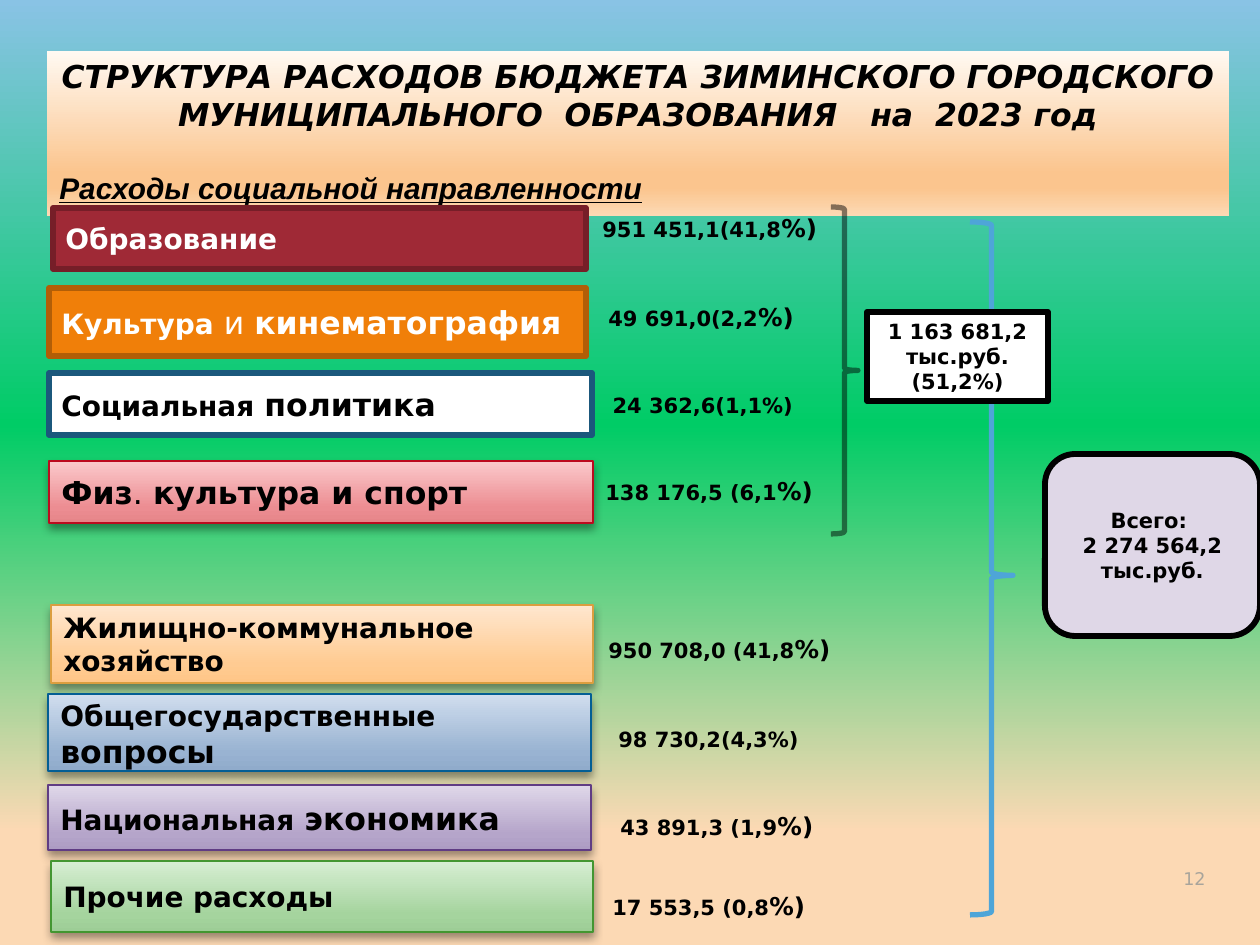
from lxml import etree
from pptx import Presentation
from pptx.dml.color import RGBColor
from pptx.enum.shapes import MSO_SHAPE
from pptx.enum.text import MSO_ANCHOR, PP_ALIGN
from pptx.oxml.ns import qn
from pptx.util import Pt

RECT, ROUNDED, BRACE = MSO_SHAPE.RECTANGLE, MSO_SHAPE.ROUNDED_RECTANGLE, MSO_SHAPE.RIGHT_BRACE
TOP, MIDDLE, BOTTOM = MSO_ANCHOR.TOP, MSO_ANCHOR.MIDDLE, MSO_ANCHOR.BOTTOM
LEFT, CENTER, RIGHT = PP_ALIGN.LEFT, PP_ALIGN.CENTER, PP_ALIGN.RIGHT
PX = 914400 / 126


class Theme:
    font, subtitle_font = "DejaVu Sans", "Arial"
    black, white, muted = "000000", "FFFFFF", "A8A49B"
    sky_to_sand = [(0, "89C3E5"), (45, "00CC66"), (88, "FCD9B4")]
    title_fill = [(0, "FFF9F2"), (74, "FBC58E"), (83, "FBC58E"), (100, "FCD9B4")]
    total_fill, total_brace = "DFD7E7", "4EA5D8"
    title, subtitle, large, label, percent, value, page = 18, 17, 18, 16, 14, 12, 10
    heavy, brace, thin = 3.35, 3, 0.75


def paint_gradient(fill, element, stops):
    """Fill from top to bottom; element is the XML that holds the fill."""
    fill.gradient()
    fill.gradient_angle = 270
    stop_list = element.find(".//" + qn("a:gsLst"))
    for stop in list(stop_list):
        stop_list.remove(stop)
    for position, color in stops:
        stop = etree.SubElement(stop_list, qn("a:gs"), pos=str(position * 1000))
        etree.SubElement(stop, qn("a:srgbClr"), val=color)


def add_block(kind, box, paragraphs=(), fill=None, line=None, weight=Theme.heavy,
              anchor=TOP, align=LEFT, color=Theme.black):
    """Add a shape, or a text box when kind is None; a run is (text, size, font changes)."""
    bounds = [round(length * PX) for length in box]
    if kind is None:
        block = slide.shapes.add_textbox(*bounds)
    else:
        block = slide.shapes.add_shape(kind, *bounds)
        block.shadow.inherit = False
        if isinstance(fill, list):
            paint_gradient(block.fill, block._element.spPr, fill)
        elif fill:
            block.fill.solid()
            block.fill.fore_color.rgb = RGBColor.from_string(fill)
        else:
            block.fill.background()
        if line:
            block.line.color.rgb = RGBColor.from_string(line)
            block.line.width = Pt(weight)
        else:
            block.line.fill.background()
    frame = block.text_frame
    frame.word_wrap = True
    frame.vertical_anchor = anchor
    for index, runs in enumerate(paragraphs):
        paragraph = frame.paragraphs[0] if index == 0 else frame.add_paragraph()
        paragraph.alignment = align
        for text, size, *changes in runs:
            run = paragraph.add_run()
            run.text = text
            font_format = {"name": Theme.font, "size": Pt(size), "bold": True}
            for change in changes:
                font_format.update(change)
            for attribute, setting in font_format.items():
                setattr(run.font, attribute, setting)
            run.font.color.rgb = RGBColor.from_string(color)
    return block


prs = Presentation()
prs.slide_width, prs.slide_height = round(1260 * PX), round(945 * PX)
slide = prs.slides.add_slide(prs.slide_layouts[6])
paint_gradient(slide.background.fill, slide._element, Theme.sky_to_sand)

# Brace of all expenses, page number and heading
total_brace = add_block(BRACE, (970, 222, 43, 693), line=Theme.total_brace, weight=Theme.brace)
total_brace.adjustments[0], total_brace.adjustments[1] = 0.08, 0.51

REGULAR, ITALIC = {"bold": False}, {"italic": True}
add_block(None, (1155, 845, 63, 50), [[("12", Theme.page, REGULAR)]],
          anchor=BOTTOM, align=RIGHT, color=Theme.muted)
heading = add_block(RECT, (47, 51, 1182, 165), [
    [("СТРУКТУРА РАСХОДОВ БЮДЖЕТА ЗИМИНСКОГО ГОРОДСКОГО "
      "МУНИЦИПАЛЬНОГО  ОБРАЗОВАНИЯ   на  2023 год", Theme.title, ITALIC)],
    [("Расходы социальной направленности", Theme.subtitle, ITALIC,
      {"name": Theme.subtitle_font, "underline": True})],
], fill=Theme.title_fill, align=CENTER)
subtitle = heading.text_frame.paragraphs[1]
subtitle.alignment = LEFT
subtitle.space_before = Pt(21)

# Expense categories: box, fill, line, text colour, runs
SMALL, BIG = Theme.label, Theme.large
categories = [
    ((53, 208, 533, 61), "9F2936", "761E28", Theme.white, [("Образование", SMALL)]),
    ((49, 288, 537, 68), "F07F09", "B25E07", Theme.white,
     [("Культура", SMALL), (" и ", BIG, REGULAR), ("кинематография", BIG)]),
    ((49, 373, 543, 62), Theme.white, "1B587C", Theme.black,
     [("Социальная", SMALL), (" ", BIG, REGULAR), ("политика", BIG)]),
    ((49, 461, 544, 62), ["FBCACC", "EC8D92", "E68589"], "BC0B1F", Theme.black,
     [("Физ", BIG), (". ", BIG, REGULAR), ("культура и спорт", BIG)]),
    ((51, 605, 542, 78), ["FFE7CF", "FFCB92", "FFC687"], "DB9E3F", Theme.black,
     [("Жилищно-коммунальное хозяйство", SMALL)]),
    ((48, 694, 543, 77), ["D1DEEE", "99B3D2", "90ABCB"], "035E94", Theme.black,
     [("Общегосударственные", SMALL), (" ", BIG, REGULAR), ("вопросы", BIG)]),
    ((48, 785, 543, 65), ["DFD7E9", "B5A5CA", "AD9CC3"], "603C84", Theme.black,
     [("Национальная", SMALL), (" ", BIG, REGULAR), ("экономика", BIG)]),
    ((51, 861, 542, 71), ["D7EED3", "A5D49E", "9DCD96"], "439631", Theme.black,
     [("Прочие расходы", SMALL)]),
]
for box, fill, line, color, runs in categories:
    shaded = isinstance(fill, list)
    category = add_block(RECT, box, [runs], line=line, color=color, anchor=MIDDLE,
                         fill=list(zip((0, 75, 100), fill)) if shaded else fill,
                         weight=Theme.thin if shaded else Theme.heavy)
    if shaded:
        effects = category._element.spPr.find(qn("a:effectLst"))
        shadow = etree.SubElement(effects, qn("a:outerShdw"), blurRad=str(Pt(5.2)),
                                  dist=str(Pt(3)), dir="5400000", rotWithShape="0")
        shadow_color = etree.SubElement(shadow, qn("a:srgbClr"), val=Theme.black)
        etree.SubElement(shadow_color, qn("a:alpha"), val="40000")

# Amounts with their shares: box, anchor, amount, larger ending
amounts = [
    ((590, 207, 273, 72), TOP, "951 451,1(41,8", "%)"),
    ((596, 296, 252, 43), TOP, "49 691,0(2,2", "%)"),
    ((593, 360, 285, 90), MIDDLE, " 24 362,6(1,1%)", ""),
    ((593, 444, 270, 68), BOTTOM, "138 176,5 (6,1", "%)"),
    ((596, 602, 290, 68), BOTTOM, "950 708,0 (41,8", "%)"),
    ((606, 698, 255, 60), BOTTOM, "98 730,2(4,3%)", ""),
    ((608, 779, 252, 68), BOTTOM, "43 891,3 (1,9", "%)"),
    ((600, 834, 255, 93), BOTTOM, "17 553,5 (0,8", "%)"),
]
for box, anchor, amount, ending in amounts:
    runs = [(amount, Theme.value)]
    if ending:
        runs.append((ending, Theme.percent))
    add_block(None, box, [runs], anchor=anchor)

# Social subtotal and grand total
summaries = [
    (RECT, (867, 312, 181, 89), Theme.white, TOP, ["1 163 681,2", "тыс.руб. (51,2%)"]),
    (ROUNDED, (1045, 454, 215, 182), Theme.total_fill, MIDDLE,
     ["Всего: ", "2 274 564,2", "тыс.руб."]),
]
for kind, box, fill, anchor, lines in summaries:
    add_block(kind, box, [[(text, Theme.value)] for text in lines], fill=fill,
              line=Theme.black, anchor=anchor, align=CENTER)

social_brace = add_block(BRACE, (831, 207, 27, 327), line=Theme.black, weight=Theme.brace)
brace_color = social_brace._element.spPr.find(qn("a:ln")).find(".//" + qn("a:srgbClr"))
etree.SubElement(brace_color, qn("a:alpha"), val="47000")

prs.save("out.pptx")
